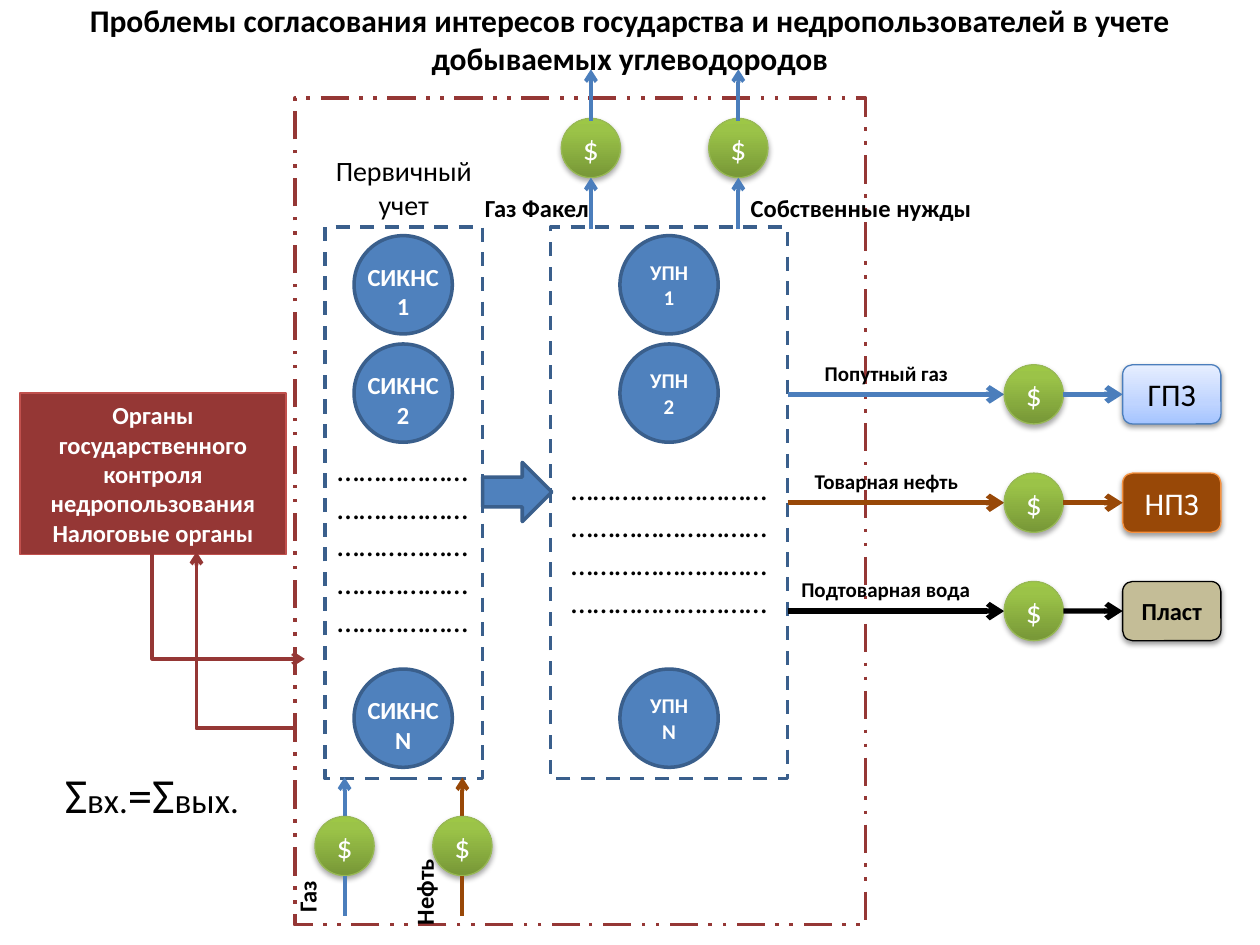
import dataclasses
import typing

import lxml.etree
import pptx
import pptx.dml.color
import pptx.enum.dml
import pptx.enum.shapes
import pptx.enum.text
import pptx.oxml.ns
import pptx.util

Inches = pptx.util.Inches
SHAPE = pptx.enum.shapes.MSO_SHAPE
CONNECTOR = pptx.enum.shapes.MSO_CONNECTOR
DASH = pptx.enum.dml.MSO_LINE
ALIGN = pptx.enum.text.PP_ALIGN
ANCHOR = pptx.enum.text.MSO_ANCHOR
qn = pptx.oxml.ns.qn


@dataclasses.dataclass(frozen=True)
class Theme:
    font: str = "Calibri"
    black: str = "000000"
    white: str = "FFFFFF"
    blue: str = "4F81BD"
    navy: str = "3A5F8C"
    gas: str = "4B7EBC"
    oil: str = "984807"
    maroon: str = "953735"
    red: str = "C0504D"
    orange: str = "F69240"
    sand: str = "C4BD97"
    green: str = "98B955"
    meter: tuple = ((0, "779737"), (80, "9BC348"), (100, "9DC746"))
    sky: tuple = ((0, "A4C4FF"), (35, "BFD4FF"), (100, "E6EEFF"))
    formula: float = 28
    index: float = 20
    large: float = 18
    heading: float = 16
    label: float = 14
    small: float = 12


@dataclasses.dataclass(frozen=True)
class Product:
    flow: str
    flow_left: float
    flow_width: float
    target: str
    fill: typing.Any
    outline: str
    flow_color: str
    format: dict


THEME = Theme()
METER = 0.47  # diameter of a metering point
UNIT = 0.78  # diameter of a processing unit
ROW = 0.86  # pitch of the unit and product rows
FIRST_ROW = 2.26  # centre of the first unit row

PRODUCTS = [
    Product("Попутный газ", 6.33, 1.41, "ГПЗ", THEME.sky, THEME.gas, THEME.gas,
            dict(size=THEME.large)),
    Product("Товарная нефть", 6.33, 1.41, "НПЗ", THEME.oil, THEME.orange, THEME.oil,
            dict(size=THEME.large, color=THEME.white)),
    Product("Подтоварная вода", 6.17, 1.72, "Пласт", THEME.sand, THEME.black, THEME.black,
            dict(size=THEME.label, bold=True)),
]


def rgb(value: str):
    return pptx.dml.color.RGBColor.from_string(value)


def format_run(run, size=THEME.label, color=THEME.black, bold=False) -> None:
    values = {"name": THEME.font, "size": pptx.util.Pt(size), "bold": bold}
    for key, value in values.items():
        setattr(run.font, key, value)
    run.font.color.rgb = rgb(color)


def write(frame, text: str, align=ALIGN.CENTER, **font) -> None:
    frame.text = text
    frame.word_wrap = True
    for paragraph in frame.paragraphs:
        paragraph.alignment = align
        for run in paragraph.runs:
            format_run(run, **font)


def add_label(slide, left, top, width, height, text, vertical=False, **font):
    frame = slide.shapes.add_textbox(*map(Inches, (left, top, width, height))).text_frame
    write(frame, text, **font)
    if vertical:
        frame._txBody.bodyPr.set("vert", "vert270")
    return frame


def add_block(slide, kind, left, top, width, height, fill, outline, weight=2.0,
              dash=None, shadow=None):
    """Draw a filled shape; fill is a colour or a tuple of gradient stops."""
    block = slide.shapes.add_shape(kind, *map(Inches, (left, top, width, height)))
    block.shadow.inherit = False
    properties = block._element.spPr
    if isinstance(fill, str):
        block.fill.solid()
        block.fill.fore_color.rgb = rgb(fill)
    else:
        block.fill.gradient()
        block.fill.gradient_angle = 90
        stops = properties.find(qn("a:gradFill")).find(qn("a:gsLst"))
        for stop in list(stops):
            stops.remove(stop)
        for position, color in fill:
            stop = lxml.etree.SubElement(stops, qn("a:gs"), pos=str(position * 1000))
            lxml.etree.SubElement(stop, qn("a:srgbClr"), val=color)
    block.line.color.rgb = rgb(outline)
    block.line.width = pptx.util.Pt(weight)
    if dash:
        block.line.dash_style = dash
    if shadow:
        distance, alpha = shadow
        outer = lxml.etree.SubElement(
            properties.find(qn("a:effectLst")), qn("a:outerShdw"), blurRad="40000",
            dist=str(distance), dir="5400000", rotWithShape="0")
        color = lxml.etree.SubElement(outer, qn("a:srgbClr"), val=THEME.black)
        lxml.etree.SubElement(color, qn("a:alpha"), val=str(alpha))
    return block


def add_unit(slide, center_x: float, row: int):
    return add_block(slide, SHAPE.OVAL, center_x - UNIT / 2,
                     FIRST_ROW + row * ROW - UNIT / 2, UNIT, UNIT, THEME.blue, THEME.navy)


def add_meter(slide, center_x: float, center_y: float) -> None:
    meter = add_block(slide, SHAPE.OVAL, center_x - METER / 2, center_y - METER / 2,
                      METER, METER, THEME.meter, THEME.green, 0.75, shadow=(23000, 35000))
    frame = meter.text_frame
    frame.margin_left = frame.margin_right = 0
    write(frame, "$", size=THEME.large, color=THEME.white)


def add_flow(slide, start, end, color, weight=2.25, arrow="tailEnd", bent=False):
    kind = CONNECTOR.ELBOW if bent else CONNECTOR.STRAIGHT
    flow = slide.shapes.add_connector(kind, *map(Inches, (*start, *end)))
    flow.line.color.rgb = rgb(color)
    flow.line.width = pptx.util.Pt(weight)
    properties = flow._element.spPr
    if bent:  # a single corner: across first, then up
        properties.find(qn("a:prstGeom")).set("prst", "bentConnector2")
    if arrow:
        lxml.etree.SubElement(properties.find(qn("a:ln")), qn(f"a:{arrow}"), type="arrow")
    lxml.etree.SubElement(properties, qn("a:effectLst"))
    return flow


def main() -> None:
    deck = pptx.Presentation()
    deck.slide_width, deck.slide_height = Inches(10), Inches(7.5)
    slide = deck.slides.add_slide(deck.slide_layouts[5])

    # Site boundary, metering group and treatment group
    add_block(slide, SHAPE.RECTANGLE, 2.34, 0.78, 4.53, 6.56, THEME.white, THEME.maroon,
              dash=DASH.DASH_DOT_DOT)
    _, treatment = [
        add_block(slide, SHAPE.RECTANGLE, left, 1.8, width, 4.38, THEME.white, THEME.navy,
                  dash=DASH.DASH)
        for left, width in ((2.58, 1.25), (4.37, 1.88))]

    # Title
    title = slide.shapes.title
    for key, value in dict(left=0, top=0, width=10, height=0.62).items():
        setattr(title, key, Inches(value))
    title.text_frame.vertical_anchor = ANCHOR.MIDDLE
    write(title.text_frame, "Проблемы согласования интересов государства и "
          "недропользователей в учете добываемых углеводородов", size=THEME.large, bold=True)

    # Units in both groups
    for row, number in ((0, "1"), (1, "2"), (4, "N")):
        add_unit(slide, 3.2, row)
        add_label(slide, 2.81, 2.03 + row * ROW, UNIT, 0.57, f"СИКНС\n{number}",
                  color=THEME.white, bold=True)
        write(add_unit(slide, 5.31, row).text_frame, f"УПН {number}", size=THEME.small,
              color=THEME.white, bold=True)
    add_label(slide, 2.58, 3.52, 1.25, 1.62, "…" * 30, align=ALIGN.LEFT, size=THEME.large)
    add_label(slide, 4.37, 3.67, 1.88, 1.31, "…" * 36, size=THEME.large)
    add_label(slide, 2.5, 1.17, 1.41, 0.64, "Первичный учет", size=THEME.heading)
    add_block(slide, SHAPE.RIGHT_ARROW, 3.83, 3.67, 0.55, 0.47, THEME.blue, THEME.navy)

    # Incoming gas and oil
    for x, color in ((2.735, THEME.gas), (3.67, THEME.oil)):
        add_flow(slide, (x, 6.72), (x, 6.17), color)
        add_meter(slide, x, 6.715)
        add_flow(slide, (x, 6.95), (x, 7.27), color, arrow=None)
    add_label(slide, 2.27, 6.72, 0.44, 0.62, "Газ", True, align=ALIGN.LEFT, bold=True)
    add_label(slide, 3.2, 6.72, 0.44, 0.78, "Нефть", True, align=ALIGN.RIGHT, bold=True)

    # Flare gas and own needs
    for x in (4.69, 5.86):
        add_meter(slide, x, 1.175)
        for bottom in (1.82, 0.96):
            add_flow(slide, (x, bottom), (x, bottom - 0.41), THEME.gas)
    add_label(slide, 3.75, 1.48, 1.09, 0.34, "Газ Факел", align=ALIGN.LEFT, bold=True)
    add_label(slide, 5.86, 1.48, 2.19, 0.34, "Собственные нужды", align=ALIGN.LEFT, bold=True)

    # Products and where they go
    for row, product in enumerate(PRODUCTS, start=1):
        y = FIRST_ROW + row * ROW + 0.01
        outflow = add_flow(slide, (6.25, y), (7.97, y), product.flow_color, 3)
        if row == 2:
            outflow.begin_connect(treatment, 3)
        add_meter(slide, 8.205, y)
        target = add_block(slide, SHAPE.ROUNDED_RECTANGLE, 8.91, y - METER / 2, UNIT, METER,
                           product.fill, product.outline, 0.75, shadow=(20000, 38000))
        write(target.text_frame, product.target, **product.format)
        add_flow(slide, (8.44, y), (8.91, y), product.flow_color, 3).end_connect(target, 1)
        add_label(slide, product.flow_left, y - 0.32, product.flow_width, 0.3, product.flow,
                  size=THEME.small, bold=True)

    # State control and its exchange with the site
    control = add_block(slide, SHAPE.RECTANGLE, 0.16, 3.12, 2.11, 1.28, THEME.maroon,
                        THEME.red, 0.75)
    write(control.text_frame, "Органы государственного контроля недропользования\n"
          "Налоговые органы", color=THEME.white, bold=True)
    add_flow(slide, (2.42, 5.23), (1.21, 4.4), THEME.maroon, arrow="headEnd", bent=True)
    add_flow(slide, (2.34, 5.78), (1.56, 4.38), THEME.maroon, bent=True)

    # Balance formula
    balance = add_label(slide, 0.23, 6.02, 1.95, 0.57, "").paragraphs[0]
    for text, size in (("Σ", THEME.formula), ("вх.", THEME.index),
                       ("=Σ", THEME.formula), ("вых.", THEME.index)):
        run = balance.add_run()
        run.text = text
        format_run(run, size=size)

    deck.save("out.pptx")


if __name__ == "__main__":
    main()
